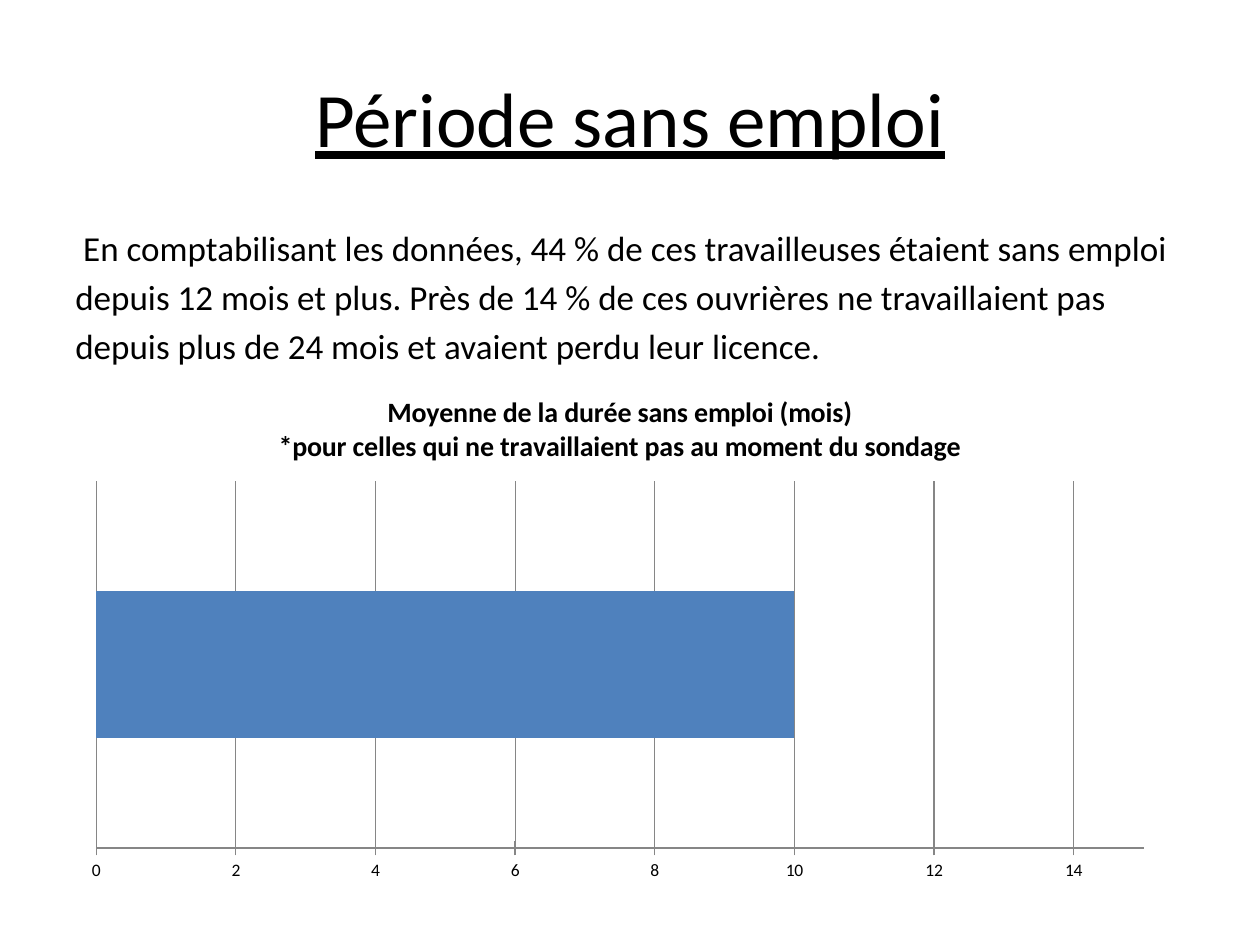
import pptx
import pptx.chart.data
import pptx.dml.color
import pptx.enum.chart
import pptx.enum.text
import pptx.oxml
import pptx.oxml.ns
import pptx.util
from pptx.util import Inches

COLORS = {"text": "000000", "bar": "4F81BD", "grid": "868686", "background": "FFFFFF"}
FONT = "Calibri"


def color(name):
    return pptx.dml.color.RGBColor.from_string(COLORS[name])


def style_font(font, size, bold=False):
    font.name = FONT
    font.size = pptx.util.Pt(size)
    font.bold = bold
    font.color.rgb = color("text")


deck = pptx.Presentation()
deck.slide_width = Inches(10)
deck.slide_height = Inches(7.5)
page = deck.slides.add_slide(deck.slide_layouts[5])
page.background.fill.solid()
page.background.fill.fore_color.rgb = color("background")

# Title
title = page.shapes.title
title.left, title.top, title.width, title.height = map(Inches, (0.5, 0.3, 9, 1.25))
title.text_frame.vertical_anchor = pptx.enum.text.MSO_ANCHOR.MIDDLE
para = title.text_frame.paragraphs[0]
para.alignment = pptx.enum.text.PP_ALIGN.CENTER
span = para.add_run()
span.text = "Période sans emploi"
style_font(span.font, 44)
span.font.underline = True

# Findings
lines = [
    " En comptabilisant les données, 44 % de ces travailleuses étaient sans emploi",
    "depuis 12 mois et plus. Près de 14 % de ces ouvrières ne travaillaient pas ",
    "depuis plus de 24 mois et avaient perdu leur licence.",
]
box = page.shapes.add_textbox(Inches(0.5), Inches(1.75), Inches(9), Inches(4.95))
box.text_frame.word_wrap = True
for index, line in enumerate(lines):
    para = box.text_frame.paragraphs[0] if index == 0 else box.text_frame.add_paragraph()
    para.alignment = pptx.enum.text.PP_ALIGN.JUSTIFY
    para.space_before = pptx.util.Pt(4)
    span = para.add_run()
    span.text = line
    style_font(span.font, 20)

# Bar chart
data = pptx.chart.data.CategoryChartData(number_format="0")
data.categories = ["1"]
data.add_series("Series 1", [10])
chart = page.shapes.add_chart(
    pptx.enum.chart.XL_CHART_TYPE.BAR_STACKED,
    Inches(0.59), Inches(2.96), Inches(8.66), Inches(4.1), data,
).chart
style_font(chart.font, 10)
chart.has_legend = False

# Chart title
chart.has_title = True
chart.chart_title.include_in_layout = False
heading = chart.chart_title.text_frame
heading_lines = [
    "Moyenne de la durée sans emploi (mois)",
    "*pour celles qui ne travaillaient pas au moment du sondage",
]
for index, line in enumerate(heading_lines):
    para = heading.paragraphs[0] if index == 0 else heading.add_paragraph()
    span = para.add_run()
    span.text = line
    style_font(span.font, 16, bold=True)

# Bars and axes
plot = chart.plots[0]
plot.gap_width = 150
plot.overlap = 100
plot.vary_by_categories = False
bar = plot.series[0]
bar.format.fill.solid()
bar.format.fill.fore_color.rgb = color("bar")

chart.category_axis.visible = False
axis = chart.value_axis
axis.minimum_scale = 0
axis.maximum_scale = 15
axis.major_unit = 2
axis.major_tick_mark = pptx.enum.chart.XL_TICK_MARK.CROSS
axis.tick_labels.number_format = "0"
axis.tick_labels.number_format_is_linked = False
axis.has_major_gridlines = True
for line_format in (axis.format.line, axis.major_gridlines.format.line):
    line_format.color.rgb = color("grid")
    line_format.width = pptx.util.Pt(0.75)

# Plot position inside the chart, as fractions of its size
plot_area = chart.plots[0]._element.getparent()
for old_layout in plot_area.findall(pptx.oxml.ns.qn("c:layout")):
    plot_area.remove(old_layout)
fractions = {"x": 0.02, "y": 0.21, "w": 0.96, "h": 0.71}
modes = "".join(f'<c:{key}Mode val="edge"/>' for key in "xy")
sizes = "".join(f'<c:{key} val="{value}"/>' for key, value in fractions.items())
plot_area.insert(0, pptx.oxml.parse_xml(
    f'<c:layout {pptx.oxml.ns.nsdecls("c")}><c:manualLayout>'
    f'<c:layoutTarget val="inner"/>{modes}{sizes}</c:manualLayout></c:layout>'
))

deck.save("out.pptx")
